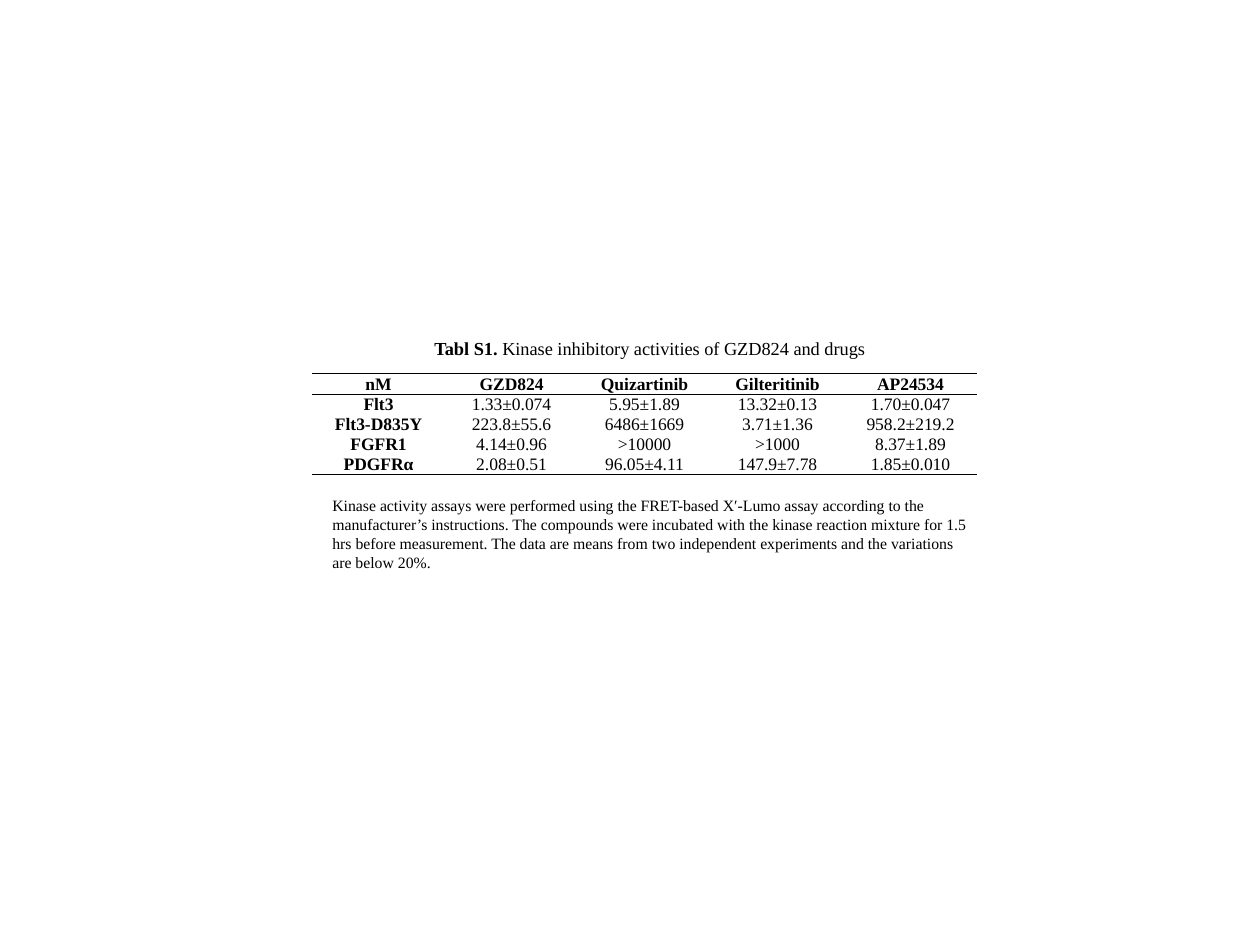
from typing import NamedTuple

from lxml import etree
from pptx import Presentation
from pptx.dml.color import RGBColor
from pptx.enum.text import MSO_ANCHOR, MSO_AUTO_SIZE, PP_ALIGN
from pptx.oxml.ns import qn
from pptx.util import Emu, Pt

CENTER = PP_ALIGN.CENTER
BOTTOM = MSO_ANCHOR.BOTTOM
GROW = MSO_AUTO_SIZE.SHAPE_TO_FIT_TEXT
EMU_PER_PX = 914400 / 126
FONT = "Times New Roman"
INK = "000000"
RULE_WIDTH = Pt(0.5)


class Span(NamedTuple):
    text: str
    bold: bool = False


class Caption(NamedTuple):
    left: int
    top: int
    width: int
    height: int
    size: float
    wrap: bool
    spans: tuple[Span, ...]


CAPTIONS = (
    Caption(422, 331, 461, 35, 10.5, False, (
        Span("Tabl S1. ", True),
        Span("Kinase inhibitory activities of GZD824 and drugs"),
    )),
    Caption(320, 490, 665, 89, 9, True, (
        Span("Kinase activity assays were performed using the FRET-based X′-Lumo assay "
             "according to the manufacturer’s instructions. The compounds were incubated "
             "with the kinase reaction mixture for 1.5 hrs before measurement. The data "
             "are means from two independent experiments and the variations are below 20%."),
    )),
)

ACTIVITIES = (
    ("nM", "GZD824", "Quizartinib", "Gilteritinib", "AP24534"),
    ("Flt3", "1.33±0.074", "5.95±1.89", "13.32±0.13", "1.70±0.047"),
    ("Flt3-D835Y", "223.8±55.6", "6486±1669", "3.71±1.36", "958.2±219.2"),
    ("FGFR1", "4.14±0.96", ">10000", ">1000", "8.37±1.89"),
    ("PDGFRα", "2.08±0.51", "96.05±4.11", "147.9±7.78", "1.85±0.010"),
)
TABLE_LEFT, TABLE_TOP, COLUMN_WIDTH = 312, 373, 133
HEADER_HEIGHT, ROW_HEIGHT = 21, 20


def px(length: int) -> Emu:
    return Emu(round(length * EMU_PER_PX))


def color(value: str) -> RGBColor:
    return RGBColor.from_string(value)


def add_span(para, span: Span, size: float) -> None:
    run = para.add_run()
    run.text = span.text
    run.font.name = FONT
    run.font.size = Pt(size)
    run.font.bold = span.bold
    run.font.color.rgb = color(INK)


def add_caption(page, caption: Caption) -> None:
    box = page.shapes.add_textbox(px(caption.left), px(caption.top),
                                  px(caption.width), px(caption.height))
    frame = box.text_frame
    frame.word_wrap = caption.wrap
    frame.auto_size = GROW
    for span in caption.spans:
        add_span(frame.paragraphs[0], span, caption.size)


def set_borders(cell, ruled: str) -> None:
    """Rule the sides named in ruled, out of L, R, T and B, and clear the others."""
    properties = cell._tc.get_or_add_tcPr()
    for side in "LRTB":
        line = etree.SubElement(properties, qn(f"a:ln{side}"))
        if side in ruled:
            line.set("w", str(RULE_WIDTH))
            fill = etree.SubElement(line, qn("a:solidFill"))
            etree.SubElement(fill, qn("a:srgbClr"), val=INK)
        else:
            etree.SubElement(line, qn("a:noFill"))


def fill_cell(cell, span: Span, ruled: str) -> None:
    set_borders(cell, ruled)
    cell.fill.background()
    cell.margin_left = cell.margin_right = cell.margin_top = cell.margin_bottom = 0
    cell.vertical_anchor = BOTTOM
    para = cell.text_frame.paragraphs[0]
    para.alignment = CENTER
    add_span(para, span, 10)


def add_activity_table(page) -> None:
    row_count, column_count = len(ACTIVITIES), len(ACTIVITIES[0])
    heights = [HEADER_HEIGHT] + [ROW_HEIGHT] * (row_count - 1)
    table = page.shapes.add_table(row_count, column_count, px(TABLE_LEFT), px(TABLE_TOP),
                                  px(COLUMN_WIDTH * column_count), px(sum(heights))).table
    table.first_row = table.horz_banding = False
    for column in table.columns:
        column.width = px(COLUMN_WIDTH)
    rules = {0: "TB", 1: "T", row_count - 1: "B"}
    for row, texts in enumerate(ACTIVITIES):
        table.rows[row].height = px(heights[row])
        for column, text in enumerate(texts):
            span = Span(text, row == 0 or column == 0)
            fill_cell(table.cell(row, column), span, rules.get(row, ""))


def main() -> None:
    deck = Presentation()
    deck.slide_width, deck.slide_height = px(1260), px(945)
    page = deck.slides.add_slide(deck.slide_layouts[6])
    add_activity_table(page)
    for caption in CAPTIONS:
        add_caption(page, caption)
    deck.save("out.pptx")


if __name__ == "__main__":
    main()
